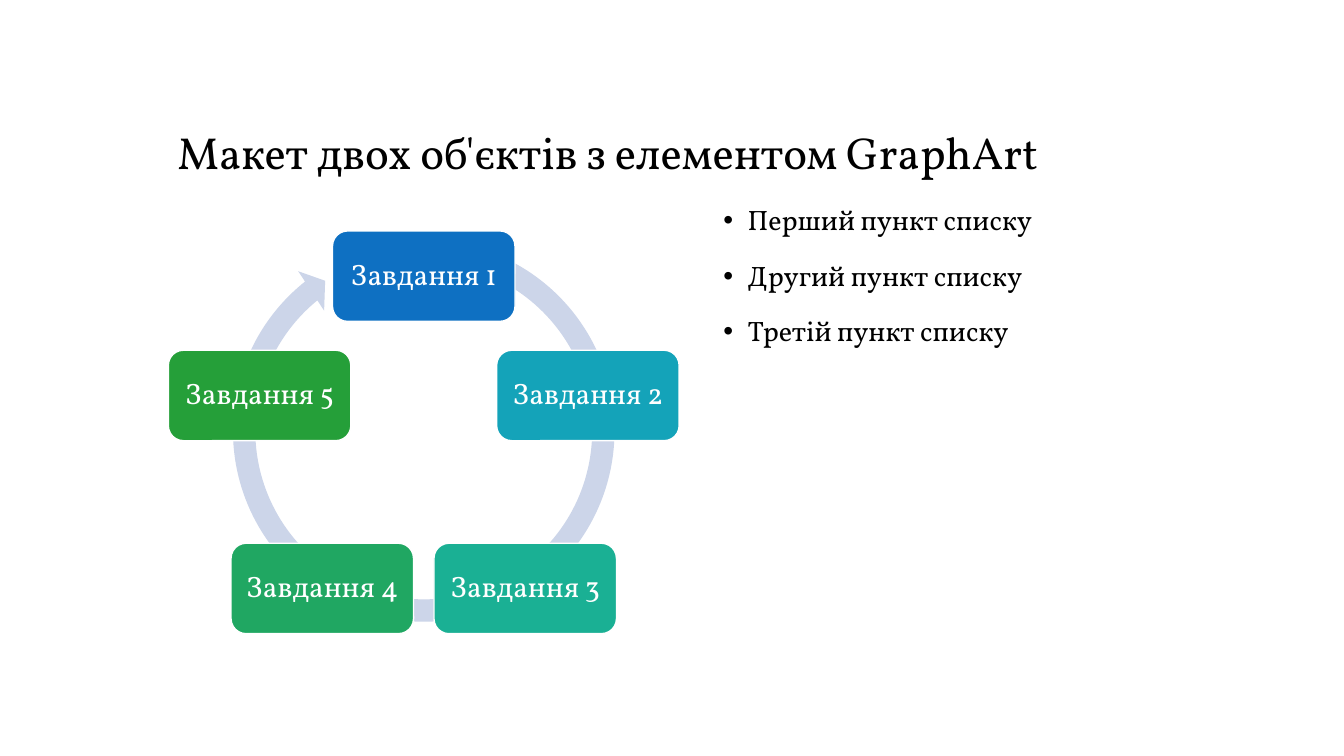
import math

from lxml import etree
from pptx import Presentation
from pptx.dml.color import RGBColor
from pptx.enum import shapes, text
from pptx.oxml.ns import qn
from pptx.util import Cm, Pt

FONT = "Vollkorn"
BLACK = RGBColor(0x00, 0x00, 0x00)
WHITE = RGBColor(0xFF, 0xFF, 0xFF)
RING_BLUE = RGBColor(0xCC, 0xD5, 0xE9)
TASK_COLORS = (
    RGBColor(0x0E, 0x70, 0xC2),
    RGBColor(0x14, 0xA3, 0xB9),
    RGBColor(0x1A, 0xB0, 0x94),
    RGBColor(0x20, 0xA7, 0x62),
    RGBColor(0x25, 0x9F, 0x39),
)
LIST_ITEMS = ("Перший пункт списку", "Другий пункт списку", "Третій пункт списку")


def style_paragraph(paragraph, size, color):
    """Apply the common font and line spacing to a paragraph."""
    paragraph.line_spacing = 0.9
    paragraph.font.name = FONT
    paragraph.font.size = Pt(size)
    paragraph.font.color.rgb = color


def add_title(slide, left, top, width, height):
    """Place the slide title at the bottom of its box."""
    frame = slide.shapes.add_textbox(left, top, width, height).text_frame
    frame.word_wrap = True
    frame.vertical_anchor = text.MSO_ANCHOR.BOTTOM
    frame.text = "Макет двох об'єктів з елементом GraphArt"
    style_paragraph(frame.paragraphs[0], 32, BLACK)


def add_bullet_list(slide, left, top, width, height):
    """Place the bulleted list in its box."""
    frame = slide.shapes.add_textbox(left, top, width, height).text_frame
    frame.word_wrap = True
    frame.text = "\n".join(LIST_ITEMS)
    for index, paragraph in enumerate(frame.paragraphs):
        properties = paragraph._p.get_or_add_pPr()
        properties.set("marL", str(Cm(0.61)))
        properties.set("indent", str(-Cm(0.61)))
        etree.SubElement(properties, qn("a:buFont")).set("typeface", "Arial")
        etree.SubElement(properties, qn("a:buChar")).set("char", "•")
        style_paragraph(paragraph, 20, BLACK)
        if index:
            paragraph.space_before = Pt(18)


def add_task(slide, center_x, center_y, label, color):
    """Place one task box around its centre."""
    width, height = Cm(4.6), Cm(2.28)
    task = slide.shapes.add_shape(
        shapes.MSO_SHAPE.ROUNDED_RECTANGLE,
        center_x - width // 2, center_y - height // 2, width, height)
    task.shadow.inherit = False
    task.fill.solid()
    task.fill.fore_color.rgb = color
    task.line.color.rgb = WHITE
    task.line.width = Pt(1)
    frame = task.text_frame
    frame.word_wrap = True
    frame.margin_left = frame.margin_right = Cm(0.2)
    frame.vertical_anchor = text.MSO_ANCHOR.MIDDLE
    frame.text = label
    frame.paragraphs[0].alignment = text.PP_ALIGN.CENTER
    style_paragraph(frame.paragraphs[0], 21, WHITE)


def add_task_cycle(slide, left, top, width, height):
    """Place the circular arrow and the tasks spaced evenly around it."""
    center_x = left + width // 2
    ring = slide.shapes.add_shape(
        shapes.MSO_SHAPE.CIRCULAR_ARROW, center_x - height // 2, top, height, height)
    ring.shadow.inherit = False
    ring.fill.solid()
    ring.fill.fore_color.rgb = RING_BLUE
    ring.line.fill.background()
    for index, percent in enumerate((5.5, 330.7, 13871.8, 17327.9, 5.8)):
        ring.adjustments[index] = percent / 100

    center_y, radius = top + Cm(5.57), Cm(4.35)
    for index, color in enumerate(TASK_COLORS):
        angle = index * math.tau / len(TASK_COLORS)
        add_task(
            slide,
            center_x + round(radius * math.sin(angle)),
            center_y - round(radius * math.cos(angle)),
            f"Завдання {index + 1}", color)


def main():
    """Build the slide and save the presentation."""
    presentation = Presentation()
    presentation.slide_width = Cm(33.87)
    presentation.slide_height = Cm(19.05)
    slide = presentation.slides.add_slide(presentation.slide_layouts[6])
    add_title(slide, Cm(4.22), Cm(1.47), Cm(26.67), Cm(3.18))
    add_bullet_list(slide, Cm(17.98), Cm(5.08), Cm(12.9), Cm(11.63))
    add_task_cycle(slide, Cm(4.24), Cm(5.74), Cm(12.88), Cm(10.24))
    presentation.save("out.pptx")


if __name__ == "__main__":
    main()
